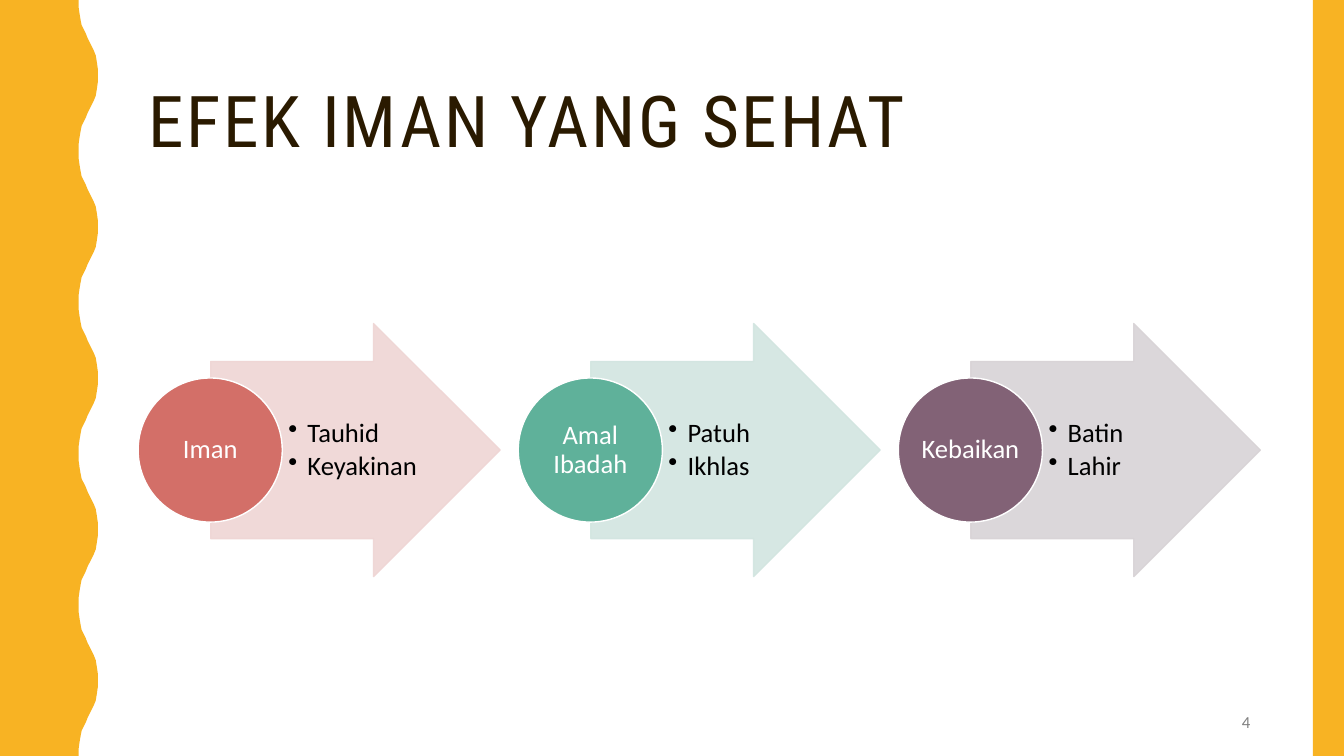
from lxml import etree
from pptx import Presentation
from pptx.dml.color import RGBColor
from pptx.enum.shapes import MSO_SHAPE
from pptx.enum.text import MSO_ANCHOR, PP_ALIGN
from pptx.oxml.ns import qn
from pptx.util import Inches, Pt

ARROW, CIRCLE, RECTANGLE = MSO_SHAPE.RIGHT_ARROW, MSO_SHAPE.OVAL, MSO_SHAPE.RECTANGLE
LEFT, CENTER, RIGHT = PP_ALIGN.LEFT, PP_ALIGN.CENTER, PP_ALIGN.RIGHT
MIDDLE = MSO_ANCHOR.MIDDLE

COLORS = {
    "gold": "F8B323", "brown": "2A1A00", "gray": "808080",
    "white": "FFFFFF", "black": "000000",
    "red": "D36F68", "light red": "EFD5D4",
    "green": "5FB19A", "light green": "D2E5E0",
    "purple": "826276", "light purple": "D8D3D6",
}
STAGES = [
    ("Iman", ["Tauhid", "Keyakinan"], "red"),
    ("Amal Ibadah", ["Patuh", "Ikhlas"], "green"),
    ("Kebaikan", ["Batin", "Lahir"], "purple"),
]
STAGE_LEFT, STAGE_PITCH = 1.37, 3.77

# Half a wave of the left edge, as (x, y) in inches
WAVE_RISE = [
    (0.78, 0), (0.78, 0.07), (0.79, 0.14), (0.8, 0.2), (0.81, 0.25),
    (0.83, 0.29), (0.85, 0.33), (0.87, 0.38), (0.89, 0.42), (0.91, 0.46),
    (0.93, 0.5), (0.95, 0.55), (0.96, 0.61), (0.97, 0.68), (0.97, 0.75),
]
WAVE_LENGTH, WAVE_COUNT = 1.5, 5


def color(name):
    return RGBColor.from_string(COLORS[name])


def style_shape(shape, fill, line=None):
    shape.shadow.inherit = False
    shape.fill.solid()
    shape.fill.fore_color.rgb = color(fill)
    if line:
        shape.line.color.rgb = color(line)
        shape.line.width = Pt(1)
    else:
        shape.line.fill.background()


def add_shape(slide, kind, box, fill, line=None):
    shape = slide.shapes.add_shape(kind, *map(Inches, box))
    style_shape(shape, fill, line)
    return shape


def set_opacity(shape, percent):
    for element in shape._element.spPr.iter(qn("a:srgbClr")):
        etree.SubElement(element, qn("a:alpha"), val=str(percent * 1000))


def add_bullet(paragraph, indent):
    properties = paragraph._p.get_or_add_pPr()
    properties.set("marL", str(Inches(indent)))
    properties.set("indent", str(-Inches(indent)))
    etree.SubElement(properties, qn("a:buChar"), char="•")


def add_text(slide, box, lines, size, color_name, font="Calibri", align=LEFT,
             margins=(0.1, 0.05, 0.1, 0.05), spacing=0.9, bullets=False):
    frame = slide.shapes.add_textbox(*map(Inches, box)).text_frame
    frame.word_wrap = True
    frame.vertical_anchor = MIDDLE
    (frame.margin_left, frame.margin_top,
     frame.margin_right, frame.margin_bottom) = map(Inches, margins)
    frame.text = "\n".join(lines)
    for paragraph in frame.paragraphs:
        if bullets:
            add_bullet(paragraph, 0.19)
            paragraph.space_after = Pt(3)
        paragraph.alignment = align
        paragraph.line_spacing = spacing
        paragraph.font.name = font
        paragraph.font.size = Pt(size)
        paragraph.font.color.rgb = color(color_name)
    return frame


def add_wave(slide):
    half = WAVE_LENGTH / 2
    fall = [(x, 2 * half - y) for x, y in reversed(WAVE_RISE[1:-1])]
    edge = [(x, y + wave * WAVE_LENGTH)
            for wave in range(WAVE_COUNT) for x, y in WAVE_RISE + fall]
    bottom = WAVE_COUNT * WAVE_LENGTH
    points = edge + [(WAVE_RISE[0][0], bottom), (0, bottom)]
    builder = slide.shapes.build_freeform(0, 0)
    builder.add_line_segments([(Inches(x), Inches(y)) for x, y in points])
    style_shape(builder.convert_to_shape(), "gold")


def add_stage(slide, left, name, effects, hue):
    arrow = add_shape(slide, ARROW, (left + 0.72, 3.21, 2.87, 2.51),
                      f"light {hue}", f"light {hue}")
    arrow.adjustments[0] = 0.7
    arrow.adjustments[1] = 0.5
    set_opacity(arrow, 90)
    add_text(slide, (left + 1.44, 3.59, 1.4, 1.76), effects, 19, "black",
             margins=(0.05, 0.01, 0.03, 0.01), bullets=True)
    add_shape(slide, CIRCLE, (left, 3.75, 1.43, 1.43), hue, "white")
    add_text(slide, (left + 0.21, 3.96, 1.01, 1.01), [name], 19, "white",
             align=CENTER, margins=(0.01,) * 4)


def main():
    presentation = Presentation()
    presentation.slide_width = Inches(13.33)
    presentation.slide_height = Inches(7.5)
    slide = presentation.slides.add_slide(presentation.slide_layouts[6])

    # Title with widened letter spacing
    title = add_text(slide, (1.37, 0.42, 11.13, 1.63), ["EFEK IMAN YANG SEHAT"],
                     51, "brown", font="Roboto Condensed")
    title.paragraphs[0].runs[0].font._element.set("spc", "200")

    # Side decoration and slide number
    add_wave(slide)
    add_text(slide, (9.42, 6.97, 3.08, 0.38), ["4"], 12, "gray",
             align=RIGHT, spacing=1.0)
    add_shape(slide, RECTANGLE, (13.02, 0, 0.31, 7.5), "gold")

    # Three stages from faith to goodness
    for index, stage in enumerate(STAGES):
        add_stage(slide, STAGE_LEFT + index * STAGE_PITCH, *stage)

    presentation.save("out.pptx")


if __name__ == "__main__":
    main()
